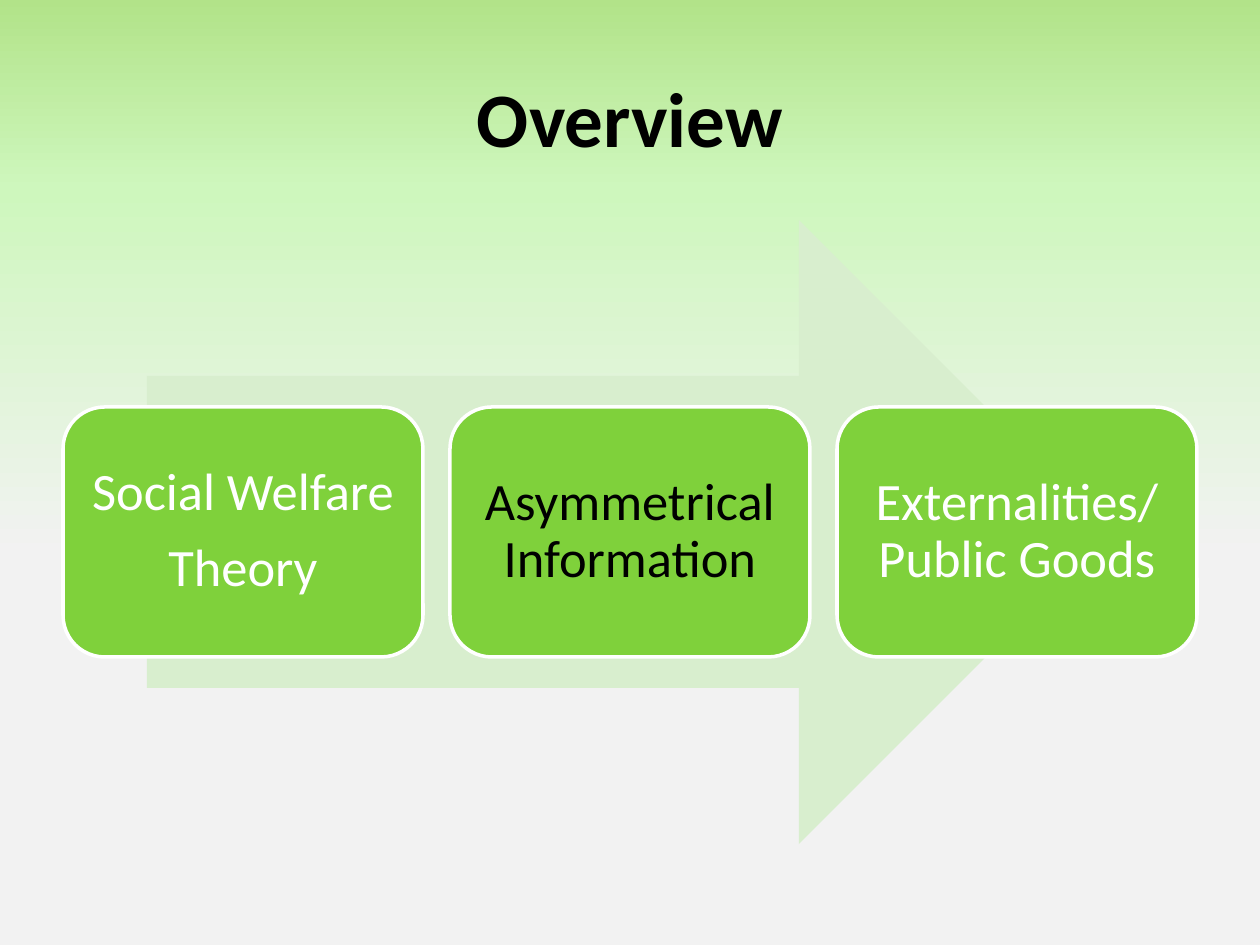
from copy import deepcopy

from pptx import Presentation
from pptx.dml.color import RGBColor
from pptx.enum.shapes import MSO_SHAPE
from pptx.enum.text import MSO_ANCHOR, PP_ALIGN
from pptx.oxml.ns import qn
from pptx.util import Pt

ARROW = MSO_SHAPE.RIGHT_ARROW
ROUNDED = MSO_SHAPE.ROUNDED_RECTANGLE
MIDDLE = MSO_ANCHOR.MIDDLE
CENTER = PP_ALIGN.CENTER

COLORS = {"green": "7FD13B", "pale": "D8EECE", "white": "FFFFFF", "black": "000000"}
BACKGROUND = [(0, "B2E389"), (0.2, "CEF7BD"), (0.59, "F2F2F2")]
TITLE = "Overview"
TOPICS = [
    (["Social Welfare", "Theory"], "white"),
    (["Asymmetrical Information"], "black"),
    (["Externalities/ Public Goods"], "white"),
]

SCALE = 914400 / 126
WIDTH, HEIGHT = 1260, 945
TITLE_AREA = (63, 38, 1134, 158)
ARROW_AREA = (147, 220, 964, 624)
CARD_LEFT, CARD_TOP, CARD_WIDTH, CARD_HEIGHT, CARD_GAP = 63, 407, 360, 250, 27
CARD_INSET = 3

TITLE_FONT = {"name": "Calibri", "size": Pt(44), "bold": True}
CARD_FONT = {"name": "Calibri", "size": Pt(30), "bold": False}
CARD_SPACING = {"line_spacing": 0.9, "space_after": Pt(11)}


def px(value):
    return round(value * SCALE)


def color(name):
    return RGBColor.from_string(COLORS[name])


def set_background(page):
    fill = page.background.fill
    fill.gradient()
    fill.gradient_angle = 270
    stop_list = page.element.find(".//" + qn("a:gsLst"))
    stop_list.append(deepcopy(stop_list[-1]))
    for stop, (position, value) in zip(fill.gradient_stops, BACKGROUND):
        stop.position = position
        stop.color.rgb = RGBColor.from_string(value)


def add_shape(page, kind, area, fill, line=None):
    shape = page.shapes.add_shape(kind, *map(px, area))
    shape.shadow.inherit = False
    shape.fill.solid()
    shape.fill.fore_color.rgb = color(fill)
    if line:
        shape.line.color.rgb = color(line)
        shape.line.width = Pt(2)
    else:
        shape.line.fill.background()
    return shape


def write(box, lines, ink, font, spacing):
    frame = box.text_frame
    frame.word_wrap = True
    frame.vertical_anchor = MIDDLE
    frame.text = "\n".join(lines)
    for para in frame.paragraphs:
        para.alignment = CENTER
        for name, value in spacing.items():
            setattr(para, name, value)
        for name, value in font.items():
            setattr(para.runs[0].font, name, value)
        para.runs[0].font.color.rgb = color(ink)


def main():
    deck = Presentation()
    deck.slide_width, deck.slide_height = px(WIDTH), px(HEIGHT)
    page = deck.slides.add_slide(deck.slide_layouts[6])
    set_background(page)

    title = page.shapes.add_textbox(*map(px, TITLE_AREA))
    write(title, [TITLE], "black", TITLE_FONT, {})

    add_shape(page, ARROW, ARROW_AREA, "pale")
    for index, (lines, ink) in enumerate(TOPICS):
        left = CARD_LEFT + index * (CARD_WIDTH + CARD_GAP)
        area = (left, CARD_TOP, CARD_WIDTH, CARD_HEIGHT)
        card = add_shape(page, ROUNDED, area, "green", "white")
        for side in ("left", "top", "right", "bottom"):
            setattr(card.text_frame, f"margin_{side}", px(CARD_INSET))
        write(card, lines, ink, CARD_FONT, CARD_SPACING)

    deck.save("out.pptx")


if __name__ == "__main__":
    main()
